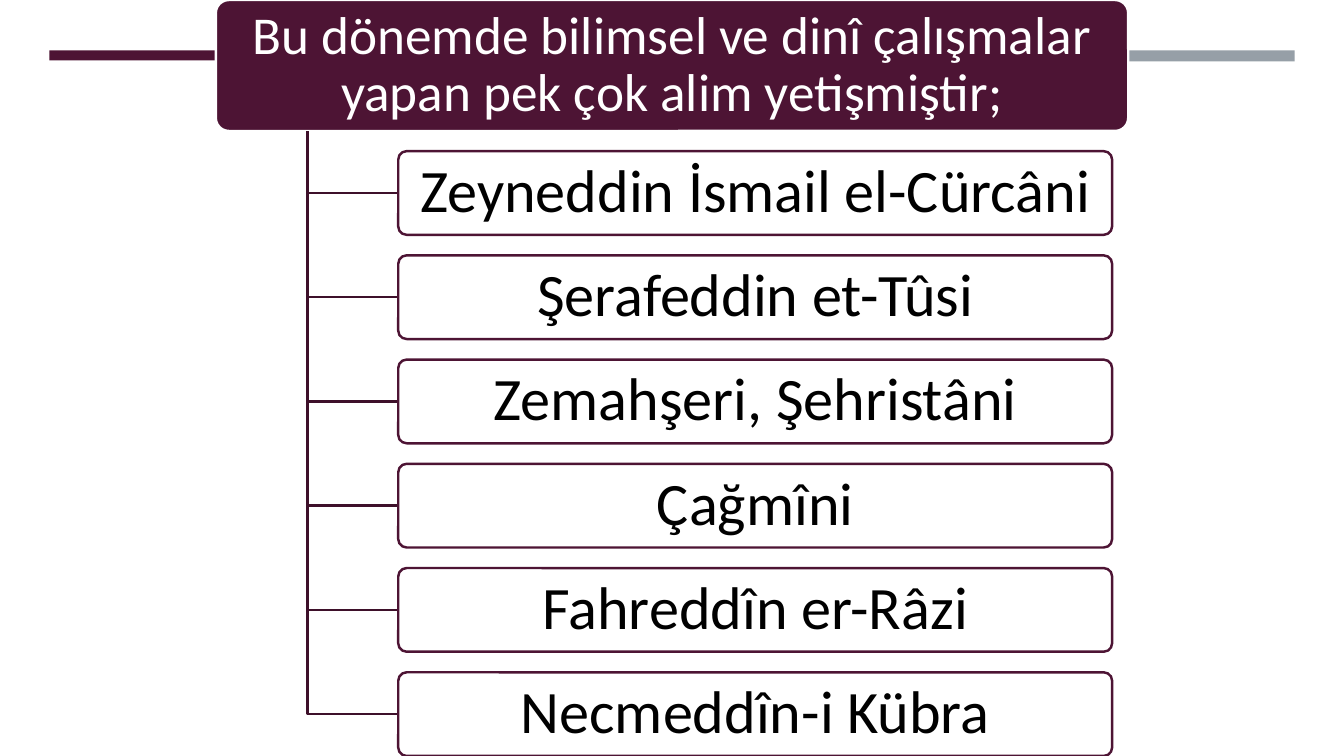
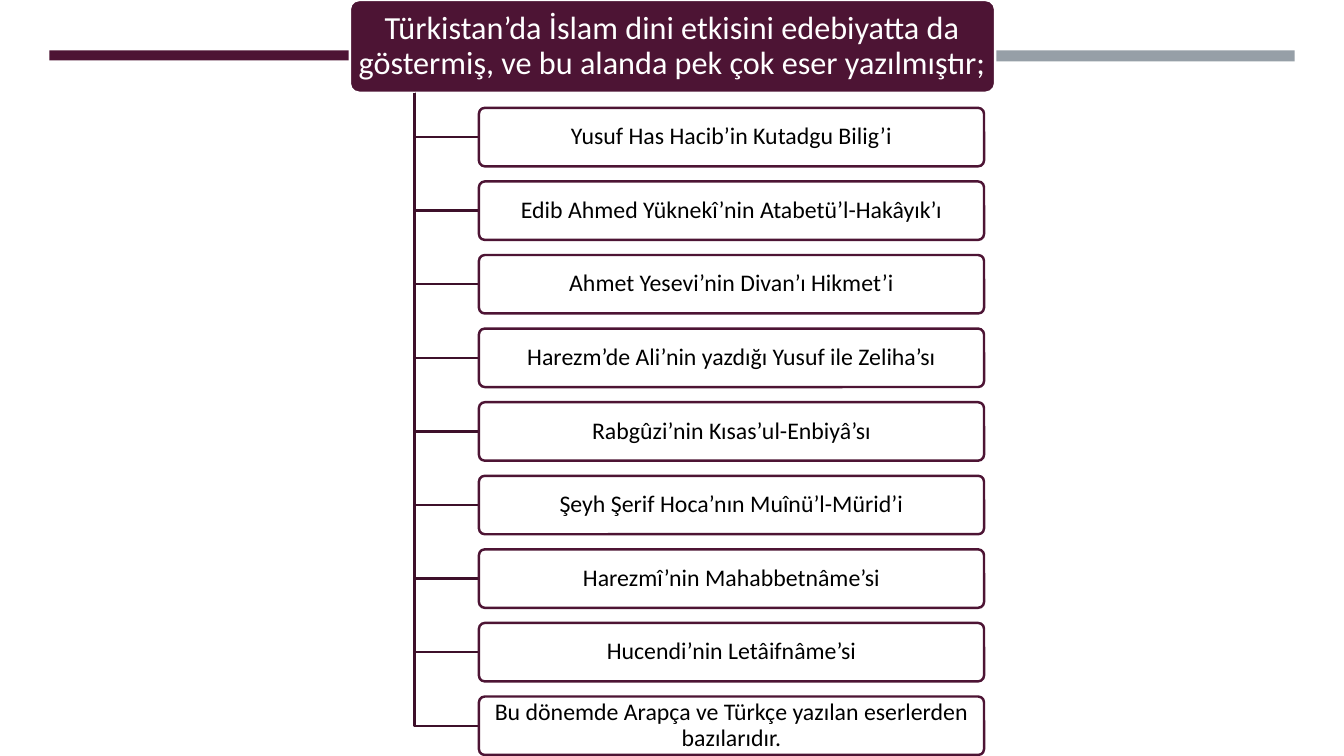
from dataclasses import dataclass

from lxml import etree
from pptx import Presentation
from pptx.dml.color import RGBColor
from pptx.enum.shapes import MSO_SHAPE
from pptx.enum.text import MSO_ANCHOR, MSO_AUTO_SIZE, PP_ALIGN
from pptx.oxml.ns import qn
from pptx.util import Inches, Pt

RECTANGLE = MSO_SHAPE.RECTANGLE
ROUNDED = MSO_SHAPE.ROUNDED_RECTANGLE
CENTER = PP_ALIGN.CENTER
MIDDLE = MSO_ANCHOR.MIDDLE
NO_AUTOFIT = MSO_AUTO_SIZE.NONE

COLORS = {
    "plum": "4D1434",
    "dark_plum": "3E102A",
    "gray": "969FA7",
    "white": "FFFFFF",
    "black": "000000",
}
FONT = "Calibri"
LINE_WIDTH = Pt(1.75)
CORNER = 0.1
CORNER_INSET = 0.03  # text inset caused by the rounded corners, per unit of height
TITLE_ONLY = 5


@dataclass(frozen=True)
class Rect:
    left: float
    top: float
    width: float
    height: float

    def lengths(self) -> tuple:
        return tuple(Inches(v) for v in (self.left, self.top, self.width, self.height))


@dataclass(frozen=True)
class TextStyle:
    size: float
    color: str
    margin_x: float
    margin_y: float


@dataclass(frozen=True)
class Hierarchy:
    title: str
    header: Rect
    title_style: TextStyle
    first_item: Rect
    last_top: float
    trunk_x: float
    item_style: TextStyle
    items: tuple[str, ...]


@dataclass(frozen=True)
class Band:
    rect: Rect
    color: str


BANDS = (
    Band(Rect(0.49, 0.5, 4.05, 0.1), "plum"),
    Band(Rect(8.79, 0.5, 4.05, 0.11), "gray"),
)

HIERARCHIES = (
    Hierarchy(
        title="Bu dönemde bilimsel ve dinî çalışmalar yapan pek çok alim yetişmiştir;",
        header=Rect(2.14, 0, 9.05, 1.3),
        title_style=TextStyle(38, "white", 0.08, 0.05),
        first_item=Rect(3.95, 1.5, 7.08, 0.83),
        last_top=6.67,
        trunk_x=3.05,
        item_style=TextStyle(43, "black", 0.09, 0.06),
        items=(
            "Zeyneddin İsmail el-Cürcâni",
            "Şerafeddin et-Tûsi",
            "Zemahşeri, Şehristâni",
            "Çağmîni",
            "Fahreddîn er-Râzi",
            "Necmeddîn-i Kübra",
        ),
    ),
    Hierarchy(
        title="Türkistan’da İslam dini etkisini edebiyatta da göstermiş, "
              "ve bu alanda pek çok eser yazılmıştır;",
        header=Rect(3.47, 0, 6.4, 0.92),
        title_style=TextStyle(23, "white", 0.05, 0.03),
        first_item=Rect(4.75, 1.07, 5.01, 0.58),
        last_top=6.91,
        trunk_x=4.11,
        item_style=TextStyle(17, "black", 0.04, 0.02),
        items=(
            "Yusuf Has Hacib’in Kutadgu Bilig’i",
            "Edib Ahmed Yüknekî’nin Atabetü’l-Hakâyık’ı",
            "Ahmet Yesevi’nin Divan’ı Hikmet’i",
            "Harezm’de Ali’nin yazdığı Yusuf ile Zeliha’sı",
            "Rabgûzi’nin Kısas’ul-Enbiyâ’sı",
            "Şeyh Şerif Hoca’nın Muînü’l-Mürid’i",
            "Harezmî’nin Mahabbetnâme’si",
            "Hucendi’nin Letâifnâme’si",
            "Bu dönemde Arapça ve Türkçe yazılan eserlerden bazılarıdır.",
        ),
    ),
)


def rgb(name: str) -> RGBColor:
    return RGBColor.from_string(COLORS[name])


def write_text(shape, text: str, style: TextStyle) -> None:
    frame = shape.text_frame
    frame.word_wrap = True
    frame.auto_size = NO_AUTOFIT
    frame.vertical_anchor = MIDDLE
    frame.margin_left = frame.margin_right = Inches(style.margin_x)
    frame.margin_top = frame.margin_bottom = Inches(style.margin_y)
    frame.text = text
    para = frame.paragraphs[0]
    para.alignment = CENTER
    para.line_spacing = 0.9
    para.font.name = FONT
    para.font.size = Pt(style.size)
    para.font.color.rgb = rgb(style.color)


def add_box(page, kind, rect: Rect, fill: str, line: str | None = None,
            opacity: int = 100):
    box = page.shapes.add_shape(kind, *rect.lengths())
    box.shadow.inherit = False
    box.fill.solid()
    box.fill.fore_color.rgb = rgb(fill)
    if opacity < 100:
        color = box._element.spPr.find(f"{qn('a:solidFill')}/{qn('a:srgbClr')}")
        etree.SubElement(color, qn("a:alpha"), val=str(opacity * 1000))
    if kind == ROUNDED:
        box.adjustments[0] = CORNER
    if line:
        box.line.color.rgb = rgb(line)
        box.line.width = LINE_WIDTH
    else:
        box.line.fill.background()
    return box


def add_elbow(page, trunk_x: float, start_y: float, end_x: float, end_y: float) -> None:
    builder = page.shapes.build_freeform(Inches(trunk_x), Inches(start_y))
    corner = (Inches(trunk_x), Inches(end_y))
    builder.add_line_segments([corner, (Inches(end_x), Inches(end_y))], close=False)
    elbow = builder.convert_to_shape()
    elbow.shadow.inherit = False
    elbow.fill.background()
    elbow.line.color.rgb = rgb("dark_plum")
    elbow.line.width = LINE_WIDTH


def add_title(page, chart: Hierarchy) -> None:
    header = chart.header
    add_box(page, ROUNDED, header, "plum", "white")
    inset = CORNER_INSET * header.height
    title = page.shapes.title
    title.left, title.top, title.width, title.height = Rect(
        header.left + inset, header.top + inset,
        header.width - 2 * inset, header.height - 2 * inset,
    ).lengths()
    write_text(title, chart.title, chart.title_style)
    # Bring the title in front of its box
    page.shapes._spTree.append(title._element)


def add_items(page, chart: Hierarchy) -> None:
    first, header = chart.first_item, chart.header
    pitch = (chart.last_top - first.top) / (len(chart.items) - 1)
    for index, text in enumerate(chart.items):
        rect = Rect(first.left, first.top + index * pitch, first.width, first.height)
        add_elbow(page, chart.trunk_x, header.top + header.height,
                  rect.left, rect.top + rect.height / 2)
        box = add_box(page, ROUNDED, rect, "white", "plum", opacity=90)
        write_text(box, text, chart.item_style)


def add_layout_bands(page, layout) -> None:
    """Draw the bands and hand them to the layout, which all slides share."""
    for number, band in enumerate(BANDS, start=20):
        shape = add_box(page, RECTANGLE, band.rect, band.color)
        shape._element.nvSpPr.cNvPr.set("id", str(number))
        layout.shapes._spTree.append(shape._element)


def main() -> None:
    deck = Presentation()
    deck.slide_width, deck.slide_height = Inches(13.33), Inches(7.5)
    layout = deck.slide_layouts[TITLE_ONLY]
    pages = [deck.slides.add_slide(layout) for _ in HIERARCHIES]
    add_layout_bands(pages[0], layout)
    for page, chart in zip(pages, HIERARCHIES):
        add_title(page, chart)
        add_items(page, chart)
    deck.save("out.pptx")


if __name__ == "__main__":
    main()
